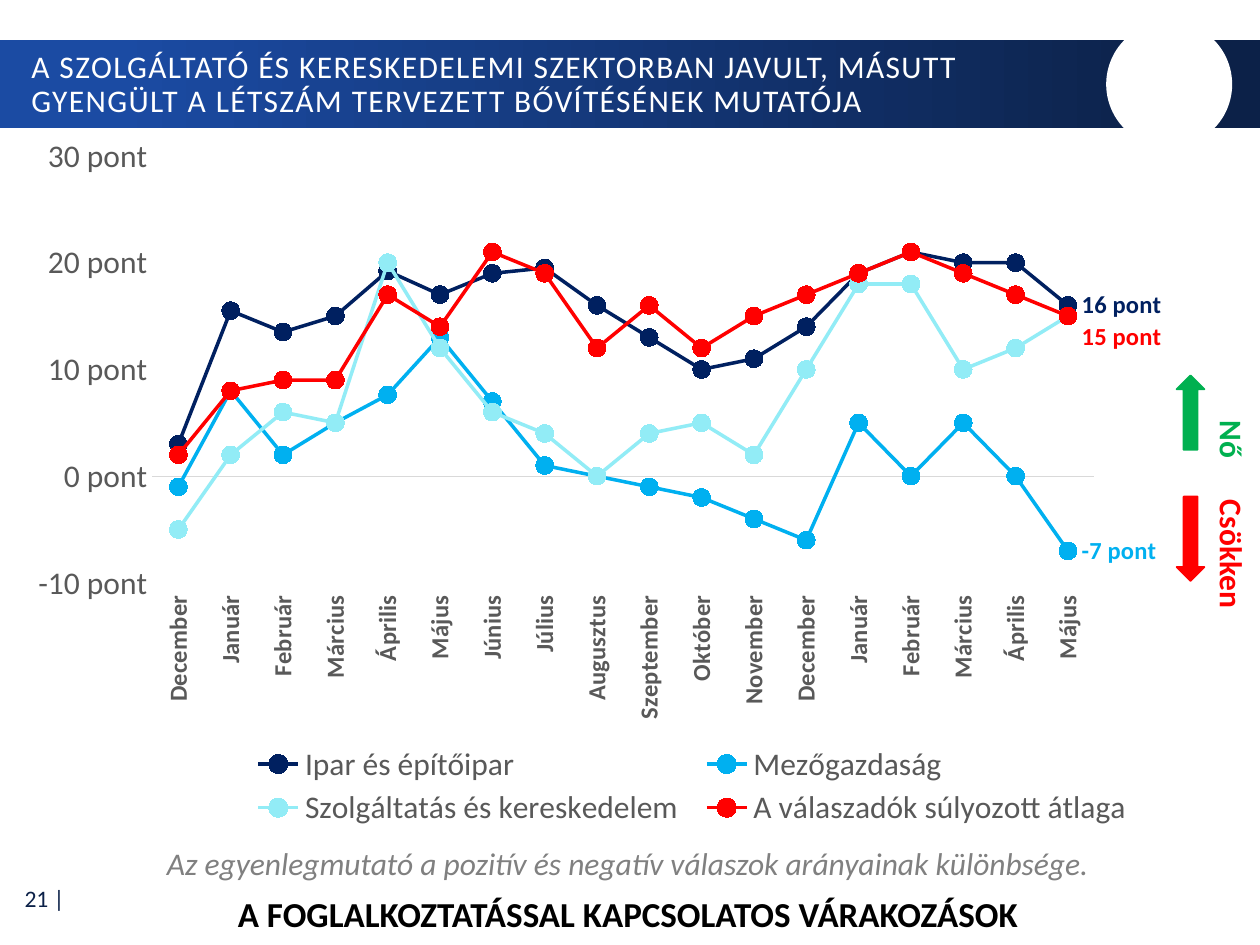
from pptx import Presentation
from pptx.chart.data import CategoryChartData
from pptx.dml.color import RGBColor
from pptx.enum.chart import (XL_CHART_TYPE, XL_LABEL_POSITION, XL_LEGEND_POSITION,
                             XL_MARKER_STYLE, XL_TICK_LABEL_POSITION, XL_TICK_MARK)
from pptx.enum.shapes import MSO_SHAPE
from pptx.enum.text import MSO_ANCHOR, PP_ALIGN
from pptx.oxml import parse_xml
from pptx.oxml.ns import nsdecls
from pptx.util import Cm, Pt

FONT = "Calibri"
COLORS = {
    "blue": "1B4BA3", "dark": "0C2148", "white": "FFFFFF", "black": "000000",
    "note": "808080", "axis": "595959", "line": "D9D9D9", "up": "00B050", "down": "FF0000",
    "industry": "002060", "farming": "00B0F0", "services": "92ECF6", "average": "FF0000",
}
MONTHS = ["Január", "Február", "Március", "Április", "Május", "Június", "Július",
          "Augusztus", "Szeptember", "Október", "November", "December"]
CATEGORIES = MONTHS[-1:] + MONTHS + MONTHS[:5]
SERIES = [
    ("Ipar és építőipar", "industry",
     [3, 15.5, 13.5, 15, 19.22, 17, 19, 19.5, 16, 13, 10, 11, 14, 19, 21, 20, 20, 16]),
    ("Mezőgazdaság", "farming",
     [-1, 8, 2, 5, 7.62, 13, 7, 1, 0, -1, -2, -4, -6, 5, 0, 5, 0, -7]),
    ("Szolgáltatás és kereskedelem", "services",
     [-5, 2, 6, 5, 20, 12, 6, 4, 0, 4, 5, 2, 10, 18, 18, 10, 12, 15]),
    ("A válaszadók súlyozott átlaga", "average",
     [2, 8, 9, 9, 17, 14, 21, 19, 12, 16, 12, 15, 17, 19, 21, 19, 17, 15]),
]


def rgb(name):
    return RGBColor.from_string(COLORS[name])


def style(font, size, color, bold=False, italic=False):
    font.name, font.size, font.bold, font.italic = FONT, Pt(size), bold, italic
    font.color.rgb = rgb(color)


def add_run(p, text, size, color, **kwargs):
    r = p.add_run()
    r.text = text
    style(r.font, size, color, **kwargs)
    return r


def add_text_box(s, x, y, w, h):
    tf = s.shapes.add_textbox(Cm(x), Cm(y), Cm(w), Cm(h)).text_frame
    tf.word_wrap = True
    return tf


def add_plain_shape(s, kind, x, y, w, h, color, outlined=False):
    sp = s.shapes.add_shape(kind, Cm(x), Cm(y), Cm(w), Cm(h))
    sp.shadow.inherit = False
    sp.fill.solid()
    sp.fill.fore_color.rgb = rgb(color)
    if outlined:
        sp.line.color.rgb = rgb(color)
        sp.line.width = Pt(1)
    else:
        sp.line.fill.background()
    return sp


def manual_layout(x, y, w=None, h=None, inner=False):
    """Return a c:layout element in fractions of the chart."""
    target = '<c:layoutTarget val="inner"/>' if inner else ""
    sized = w is not None
    modes = '<c:xMode val="edge"/><c:yMode val="edge"/>' if sized else ""
    size = f'<c:w val="{w}"/><c:h val="{h}"/>' if sized else ""
    return parse_xml(f'<c:layout {nsdecls("c")}><c:manualLayout>{target}{modes}'
                     f'<c:x val="{x}"/><c:y val="{y}"/>{size}</c:manualLayout></c:layout>')


def add_header(s, x, y, w, h):
    band = add_plain_shape(s, MSO_SHAPE.RECTANGLE, x, y, w, h, "blue")
    band.fill.gradient()
    band.fill.gradient_angle = 0
    for stop, position, color in zip(band.fill.gradient_stops, (0.09, 0.95), ("blue", "dark")):
        stop.position = position
        stop.color.rgb = rgb(color)
    add_plain_shape(s, MSO_SHAPE.OVAL, x + 22.3, y - 0.38, 2.54, 2.54, "white")

    title = s.shapes.title
    title.left, title.top, title.width, title.height = (
        Cm(x + 0.38), Cm(y + 0.05), Cm(21.59), Cm(1.7))
    s.shapes._spTree.append(title._element)  # bring in front of the band
    tf = title.text_frame
    tf.word_wrap = True
    tf.vertical_anchor = MSO_ANCHOR.MIDDLE
    p = tf.paragraphs[0]
    p.alignment = PP_ALIGN.LEFT
    p.line_spacing = 0.9
    r = add_run(p, "A SZOLGÁLTATÓ ÉS KERESKEDELEMI SZEKTORBAN JAVULT, MÁSUTT "
                   "GYENGÜLT A LÉTSZÁM TERVEZETT BŐVÍTÉSÉNEK MUTATÓJA", 18, "white")
    r.font._element.set("spc", "80")


def format_axes(chart):
    cat, val = chart.category_axis, chart.value_axis
    for axis, size in ((cat, 14), (val, 18)):
        axis.major_tick_mark = axis.minor_tick_mark = XL_TICK_MARK.NONE
        axis.has_major_gridlines = False
        style(axis.tick_labels.font, size, "axis", bold=axis is cat)
    cat.tick_label_position = XL_TICK_LABEL_POSITION.LOW
    cat.format.line.color.rgb = rgb("line")
    cat.format.line.width = Pt(0.75)
    cat._element.txPr.bodyPr.set("rot", "-5400000")
    val.minimum_scale, val.maximum_scale, val.major_unit = -10, 30, 10
    val.format.line.fill.background()
    val.tick_labels.number_format = '0\\ "pont"'
    val.tick_labels.number_format_is_linked = False


def format_series(series, color):
    series.smooth = False
    series.format.line.color.rgb = rgb(color)
    series.format.line.width = Pt(2)
    marker = series.marker
    marker.style, marker.size = XL_MARKER_STYLE.CIRCLE, 10
    marker.format.fill.solid()
    marker.format.fill.fore_color.rgb = rgb(color)
    marker.format.line.color.rgb = rgb(color)
    if color == "services":
        return
    label = series.points[len(CATEGORIES) - 1].data_label
    style(label.font, 14, color, bold=True)
    label.position = XL_LABEL_POSITION.RIGHT
    if color == "average":
        label._dLbl.insert(1, manual_layout(0, 0.03))


def add_line_chart(s, x, y, w, h):
    data = CategoryChartData(number_format='0\\ "pont"')
    data.categories = CATEGORIES
    for name, _, values in SERIES:
        data.add_series(name, values)
    chart = s.shapes.add_chart(XL_CHART_TYPE.LINE_MARKERS, Cm(x), Cm(y), Cm(w), Cm(h), data).chart
    style(chart.font, 18, "black")
    chart.has_title = False
    chart.plots[0].vary_by_categories = False
    format_axes(chart)
    for series, (_, color, _) in zip(chart.plots[0].series, SERIES):
        format_series(series, color)

    chart.has_legend = True
    legend = chart.legend
    legend.position = XL_LEGEND_POSITION.BOTTOM
    legend.include_in_layout = False
    style(legend.font, 18, "axis")
    for old in legend._element.xpath("c:layout"):
        legend._element.remove(old)
    legend._element.insert(1, manual_layout(0.19, 0.86, 0.72, 0.13))
    plot_area = chart._chartSpace.chart.plotArea
    for old in plot_area.xpath("c:layout"):
        plot_area.remove(old)
    plot_area.insert(0, manual_layout(0.12, 0.04, 0.75, 0.6, inner=True))


def add_direction_key(s, x, y):
    add_plain_shape(s, MSO_SHAPE.UP_ARROW, x, y, 0.56, 1.5, "up", outlined=True)
    down = add_plain_shape(s, MSO_SHAPE.UP_ARROW, x, y + 2.44, 0.56, 1.7, "down", outlined=True)
    down.rotation = 180
    tf = add_text_box(s, x + 0.36, y + 0.66, 1.27, 4.42)
    tf._txBody.bodyPr.set("vert", "vert")
    p = tf.paragraphs[0]
    p._p.get_or_add_pPr().append(parse_xml(
        f'<a:tabLst {nsdecls("a")}><a:tab pos="{Cm(1.6)}" algn="l"/></a:tabLst>'))
    add_run(p, "Nő\t", 18, "up", bold=True)
    add_run(p, "Csökken", 18, "down", bold=True)


def add_footer(s, x, y):
    tf = add_text_box(s, x, y + 0.74, 1.52, 0.94)
    tf.vertical_anchor = MSO_ANCHOR.MIDDLE
    p = tf.paragraphs[0]
    p.alignment = PP_ALIGN.RIGHT
    add_run(p, "21 |", 13.5, "dark")

    tf = add_text_box(s, x + 2.1, y, 21.06, 2.08)
    p = tf.paragraphs[0]
    p.alignment = PP_ALIGN.CENTER
    p.space_after = Pt(6)
    add_run(p, "Az egyenlegmutató a pozitív és negatív válaszok arányainak különbsége.",
            18, "note", italic=True)
    p = tf.add_paragraph()
    p.alignment = PP_ALIGN.CENTER
    add_run(p, "A FOGLALKOZTATÁSSAL KAPCSOLATOS VÁRAKOZÁSOK", 20, "black", bold=True)


def main():
    prs = Presentation()
    prs.slide_width, prs.slide_height = Cm(25.4), Cm(19.05)
    s = prs.slides.add_slide(prs.slide_layouts[5])
    add_header(s, 0, 0.81, 25.4, 1.78)
    add_footer(s, 0.03, 16.89)
    add_direction_key(s, 23.72, 7.57)
    add_line_chart(s, 0.03, 2.57, 25.32, 14.35)
    prs.save("out.pptx")


if __name__ == "__main__":
    main()
